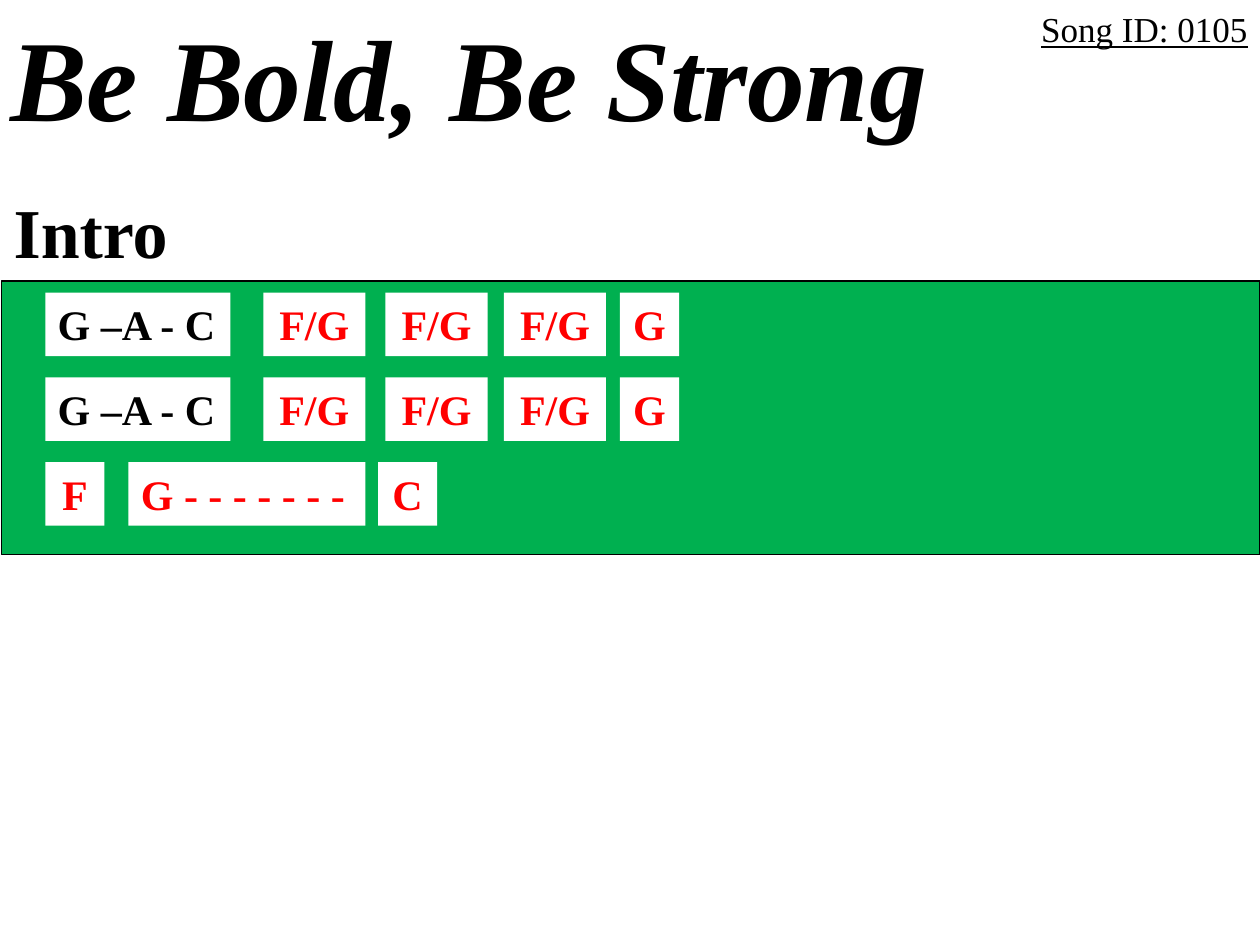
from pptx import Presentation
from pptx.dml.color import RGBColor
from pptx.enum.shapes import MSO_SHAPE
from pptx.enum.text import MSO_ANCHOR, MSO_AUTO_SIZE, PP_ALIGN
from pptx.util import Inches, Pt

WHITE = RGBColor(255, 255, 255)
BLACK = RGBColor(0, 0, 0)
RED = RGBColor(255, 0, 0)
GREEN = RGBColor(0, 176, 80)
FONT = "Times New Roman"

# Chords: text, left and width as percent of the panel, colour
RIFF = [
    ("G –A - C", 3.5, 14.71, BLACK),
    ("F/G", 20.82, 8.11, RED),
    ("F/G", 30.53, 8.11, RED),
    ("F/G", 39.94, 8.11, RED),
    ("G", 49.15, 4.7, RED),
]
CLOSE = [
    ("F", 3.5, 4.7, RED),
    ("G - - - - - - -", 10.11, 18.82, RED),
    ("C", 29.93, 4.7, RED),
]
LINES = [RIFF, RIFF, CLOSE]
# Chord rows as percent of the panel height
TOP, STEP, TALL = 4.3, 31, 23.2


def part(box, x, y, w, h):
    """Return the part of a box given in percent of its size."""
    left, top, wide, high = box
    return (round(left + wide * x / 100), round(top + high * y / 100),
            round(wide * w / 100), round(high * h / 100))


def place(shape, box):
    shape.left, shape.top, shape.width, shape.height = box


def block(slide, box, fill):
    shape = slide.shapes.add_shape(MSO_SHAPE.RECTANGLE, *box)
    shape.shadow.inherit = False
    shape.fill.solid()
    shape.fill.fore_color.rgb = fill
    shape.line.fill.background()
    return shape


def write(shape, text, size, color=BLACK, align=PP_ALIGN.LEFT, wrap=True):
    frame = shape.text_frame
    frame.text = text
    frame.word_wrap = wrap
    frame.auto_size = MSO_AUTO_SIZE.NONE
    frame.vertical_anchor = MSO_ANCHOR.TOP
    para = frame.paragraphs[0]
    para.alignment = align
    font = para.runs[0].font
    font.name = FONT
    font.size = Pt(size)
    font.color.rgb = color
    return font


def header(slide, box):
    # Song title
    title = slide.shapes.title
    place(title, part(box, -0.2, 0, 76.1, 100))
    font = write(title, "Be Bold, Be Strong", 66)
    font.bold = font.italic = True
    # Song number
    label = block(slide, part(box, 60.1, 1, 39.9, 36), WHITE)
    write(label, "Song ID: 0105", 20, align=PP_ALIGN.RIGHT).underline = True


def panel(slide, box):
    back = block(slide, box, GREEN)
    back.line.color.rgb = BLACK
    back.line.width = Pt(0.75)
    for row, line in enumerate(LINES):
        for text, x, w, color in line:
            chip = block(slide, part(box, x, TOP + row * STEP, w, TALL), WHITE)
            align = PP_ALIGN.CENTER if len(text) < 4 else PP_ALIGN.LEFT
            write(chip, text, 24, color, align, wrap=False).bold = True


def heading(slide, box):
    write(block(slide, box, WHITE), "Intro", 40).bold = True


def main():
    deck = Presentation()
    deck.slide_width, deck.slide_height = Inches(10), Inches(7.5)
    slide = deck.slides.add_slide(deck.slide_layouts[5])
    page = (0, 0, deck.slide_width, deck.slide_height)
    header(slide, part(page, 0, 0, 100, 16.13))
    panel(slide, part(page, 0.1, 29.73, 99.9, 28.93))
    heading(slide, part(page, 0.1, 19.33, 33.3, 10.27))
    deck.save("out.pptx")


if __name__ == "__main__":
    main()
